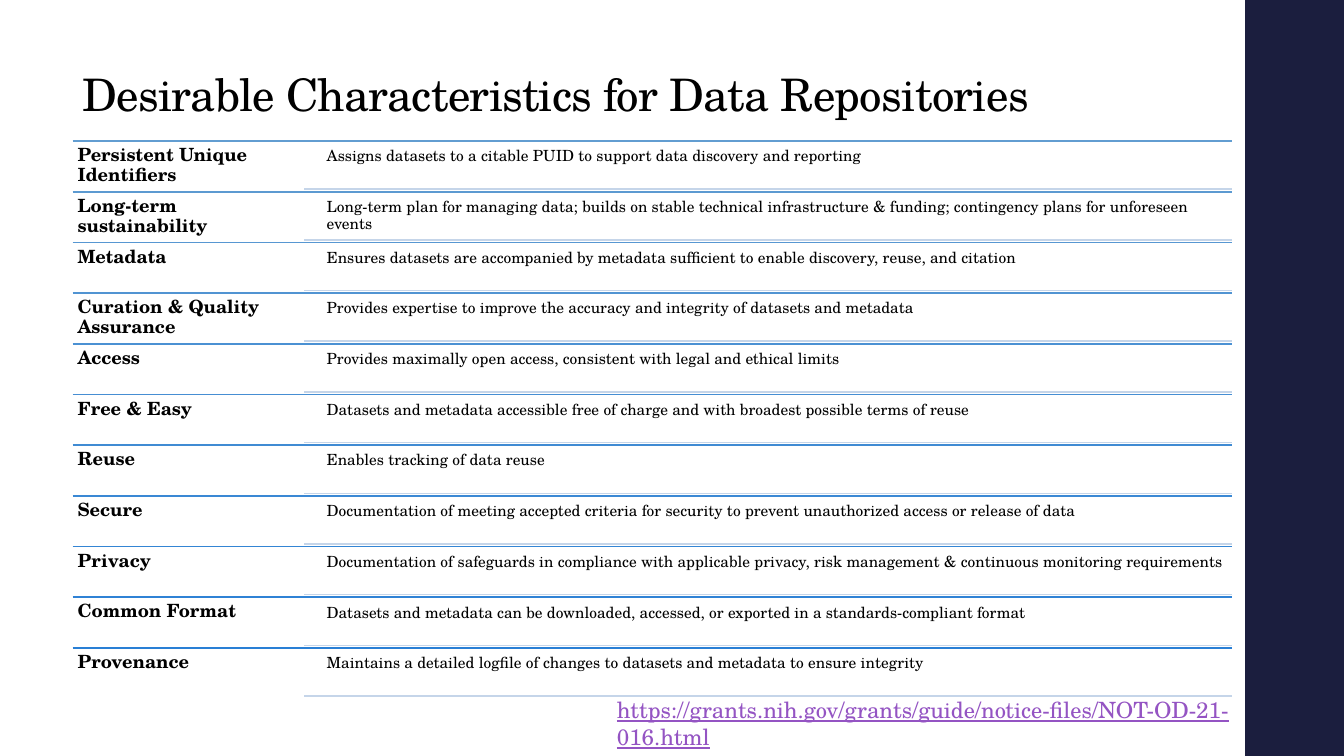
import dataclasses

import pptx
import pptx.dml.color
import pptx.enum.shapes
import pptx.enum.text
import pptx.oxml.ns
import pptx.util
from lxml import etree

Inches = pptx.util.Inches
RGB = pptx.dml.color.RGBColor


@dataclasses.dataclass(frozen=True)
class Theme:
    """Colours, font and type sizes of the slide."""
    font: str = "TeX Gyre Schola"
    ink: RGB = RGB(0, 0, 0)
    band: RGB = RGB(0x1B, 0x1E, 0x3E)
    link: RGB = RGB(0x94, 0x54, 0xC3)
    first: RGB = RGB(0x62, 0x9D, 0xD1)
    last: RGB = RGB(0x29, 0x7F, 0xD5)
    pale: RGB = RGB(0xC5, 0xD5, 0xE9)
    title: int = 32
    term: int = 13
    body: int = 11
    url: int = 16
    rule: float = 1.1


THEME = Theme()

TRAITS = [
    ("Persistent Unique Identifiers",
     "Assigns datasets to a citable PUID to support data discovery and reporting"),
    ("Long-term sustainability",
     "Long-term plan for managing data; builds on stable technical infrastructure & funding; "
     "contingency plans for unforeseen events"),
    ("Metadata",
     "Ensures datasets are accompanied by metadata sufficient to enable discovery, reuse, and citation"),
    ("Curation & Quality Assurance",
     "Provides expertise to improve the accuracy and integrity of datasets and metadata"),
    ("Access",
     "Provides maximally open access, consistent with legal and ethical limits"),
    ("Free & Easy",
     "Datasets and metadata accessible free of charge and with broadest possible terms of reuse"),
    ("Reuse", "Enables tracking of data reuse"),
    ("Secure",
     "Documentation of meeting accepted criteria for security to prevent unauthorized access "
     "or release of data"),
    ("Privacy",
     "Documentation of safeguards in compliance with applicable privacy, risk management "
     "& continuous monitoring requirements"),
    ("Common Format",
     "Datasets and metadata can be downloaded, accessed, or exported in a standards-compliant format"),
    ("Provenance",
     "Maintains a detailed logfile of changes to datasets and metadata to ensure integrity"),
]


def add_text(slide, box, text, size, color=THEME.ink, inset=None, lead=0.9):
    """Place one paragraph in a box and return its shape and run."""
    shape = slide.shapes.add_textbox(*map(Inches, box))
    frame = shape.text_frame
    frame.word_wrap = True
    if inset is not None:
        frame.margin_left = frame.margin_right = Inches(inset)
        frame.margin_top = frame.margin_bottom = Inches(inset)
    frame.text = text
    para = frame.paragraphs[0]
    para.line_spacing = lead
    run = para.runs[0]
    run.font.name = THEME.font
    run.font.size = pptx.util.Pt(size)
    run.font.color.rgb = color
    return shape, run


def add_rule(slide, left, right, top, color):
    """Draw a level line from left to right."""
    line = slide.shapes.add_connector(
        pptx.enum.shapes.MSO_CONNECTOR.STRAIGHT,
        Inches(left), Inches(top), Inches(right), Inches(top))
    line.line.color.rgb = color
    line.line.width = pptx.util.Pt(THEME.rule)
    etree.SubElement(line._element.spPr, pptx.oxml.ns.qn("a:effectLst"))


def blend(share):
    """Mix the first and last rule colours."""
    return RGB(*(round(a + (b - a) * share) for a, b in zip(THEME.first, THEME.last)))


def add_band(slide, box):
    """Fill the side band."""
    band = slide.shapes.add_shape(
        pptx.enum.shapes.MSO_SHAPE.RECTANGLE, *map(Inches, box))
    band.shadow.inherit = False
    band.fill.solid()
    band.fill.fore_color.rgb = THEME.band
    band.line.fill.background()


def add_title(slide, box):
    """Set the slide title at the foot of its box."""
    shape, run = add_text(
        slide, box, "Desirable Characteristics for Data Repositories", THEME.title)
    shape.text_frame.vertical_anchor = pptx.enum.text.MSO_ANCHOR.BOTTOM
    run._r.get_or_add_rPr().set("spc", "-50")


def add_list(slide, box, traits):
    """Stack ruled rows of terms and their meanings."""
    left, top, width, height = box
    right = left + width
    step = height / len(traits)
    split = left + width * 0.2
    indent = split + 0.17
    gap = step * 0.05
    for index, (term, note) in enumerate(traits):
        y = top + index * step
        add_rule(slide, left, right, y, blend(index / (len(traits) - 1)))
        run = add_text(slide, (left, y, split - left, step), term,
                       THEME.term, inset=0.05)[1]
        run.font.bold = True
        add_text(slide, (indent, y + gap, right - indent, step - 2 * gap), note,
                 THEME.body, inset=0.05)
        add_rule(slide, split, right, y + step - gap, THEME.pale)


def add_url(slide, box):
    """Set the underlined web address."""
    run = add_text(
        slide, box,
        "https://grants.nih.gov/grants/guide/notice-files/NOT-OD-21-016.html",
        THEME.url, THEME.link, lead=1.0)[1]
    run.font.underline = True


def main():
    """Build and save the slide."""
    deck = pptx.Presentation()
    deck.slide_width = Inches(13.33)
    deck.slide_height = Inches(7.5)
    slide = deck.slides.add_slide(deck.slide_layouts[6])
    add_band(slide, (12.35, 0, 0.98, 7.5))
    add_title(slide, (0.72, 0.43, 11.5, 0.82))
    add_list(slide, (0.72, 1.4, 11.5, 5.53), TRAITS)
    add_url(slide, (6.02, 6.86, 6.67, 0.64))
    deck.save("out.pptx")


if __name__ == "__main__":
    main()
